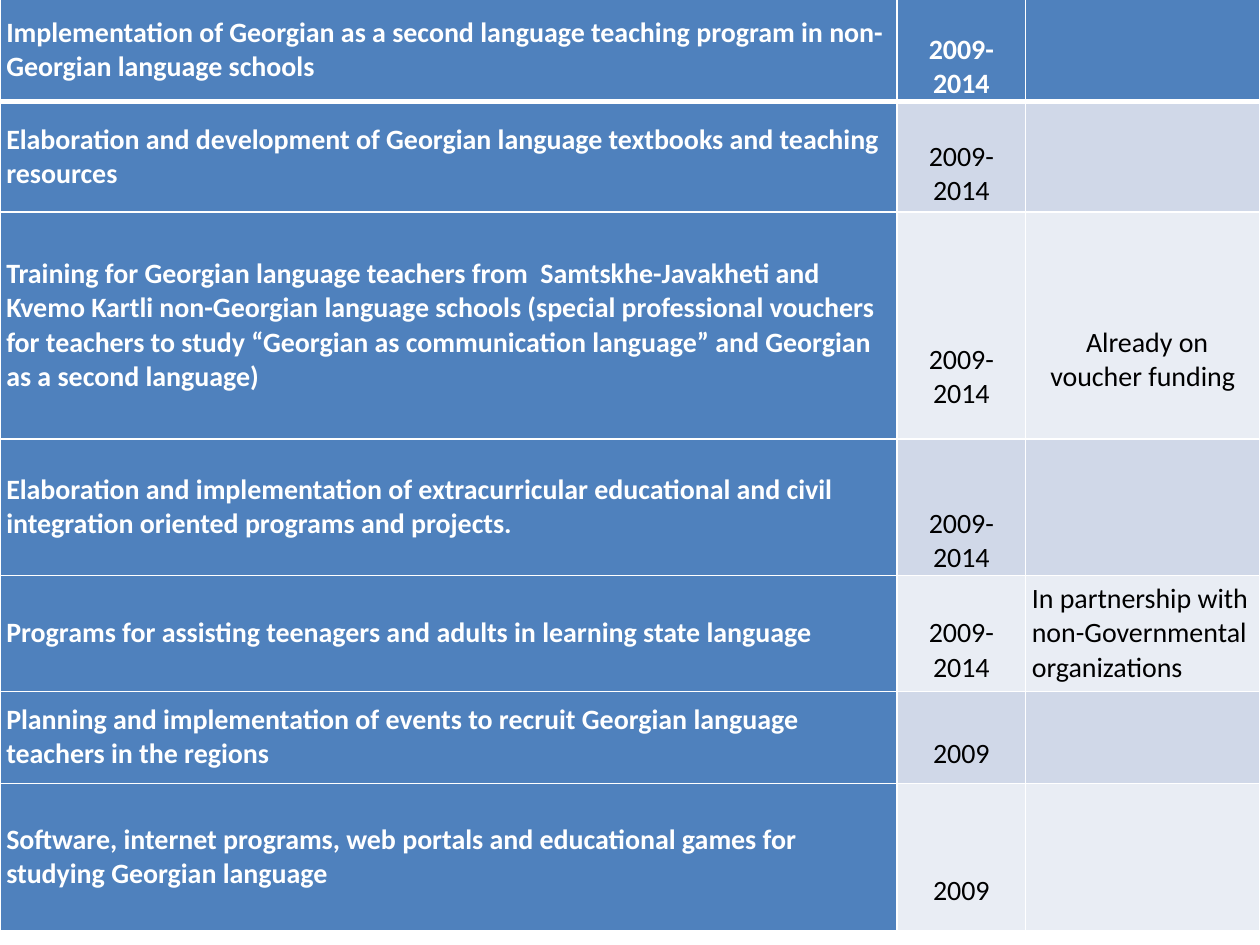
from typing import NamedTuple

from lxml import etree
from pptx import Presentation
from pptx.dml.color import RGBColor
from pptx.enum.text import MSO_ANCHOR, PP_ALIGN
from pptx.oxml.ns import qn
from pptx.util import Inches, Length, Pt

MIDDLE = MSO_ANCHOR.MIDDLE
LEFT, CENTER = PP_ALIGN.LEFT, PP_ALIGN.CENTER

COLORS = {
    "accent": "4F81BD",
    "band_dark": "D0D8E8",
    "band_light": "E9EDF4",
    "white": "FFFFFF",
    "black": "000000",
}
COLUMN_WIDTHS = (7.12, 1.02, 1.86)
LINE_HEIGHT = 0.27
SIDE_MARGIN = Inches(0.05)


class Entry(NamedTuple):
    text: str = ""
    lines_down: int = 0
    align: PP_ALIGN = CENTER
    indent: Length = Inches(0)


class Activity(NamedTuple):
    height: float
    title: str
    years: Entry
    note: Entry = Entry()


ACTIVITIES = (
    Activity(0.79, "Implementation of Georgian as a second language teaching program "
             "in non-Georgian language schools", Entry("2009-2014", 1)),
    Activity(0.88, "Elaboration and development of Georgian language textbooks "
             "and teaching resources", Entry("2009-2014", 1)),
    Activity(1.8, "Training for Georgian language teachers from  Samtskhe-Javakheti and "
             "Kvemo Kartli non-Georgian language schools (special professional vouchers "
             "for teachers to study “Georgian as communication language” and Georgian "
             "as a second language)", Entry("2009-2014", 3),
             Entry("Already on voucher funding", 2, indent=Inches(0.07))),
    Activity(1.05, "Elaboration and implementation of extracurricular educational and civil "
             "integration oriented programs and projects.", Entry("2009-2014", 2)),
    Activity(0.92, "Programs for assisting teenagers and adults in learning state language",
             Entry("2009-2014", 1),
             Entry("In partnership with non-Governmental organizations", align=LEFT)),
    Activity(0.73, "Planning and implementation of events to recruit Georgian language "
             "teachers in the regions", Entry("2009", 1)),
    Activity(1.17, "Software, internet programs, web portals and educational games for "
             "studying Georgian language", Entry("2009", 2)),
)


def color(name: str) -> RGBColor:
    return RGBColor.from_string(COLORS[name])


def set_borders(cell, widths: dict[str, int]) -> None:
    """Put white border lines ahead of the cell's fill, as the schema orders them."""
    properties = cell._tc.get_or_add_tcPr()
    for position, (side, width) in enumerate(widths.items()):
        line = etree.Element(qn(f"a:ln{side}"), w=str(Pt(width)))
        fill = etree.SubElement(line, qn("a:solidFill"))
        etree.SubElement(fill, qn("a:srgbClr"), val=COLORS["white"])
        properties.insert(position, line)


def fill_cell(cell, entry: Entry, background: str, strong: bool) -> None:
    """Style a cell; the top margin pushes its text down by whole lines."""
    cell.fill.solid()
    cell.fill.fore_color.rgb = color(background)
    layout = {
        "vertical_anchor": MIDDLE,
        "margin_left": SIDE_MARGIN,
        "margin_right": SIDE_MARGIN,
        "margin_top": Inches(entry.lines_down * LINE_HEIGHT),
        "margin_bottom": Inches(0),
    }
    for name, value in layout.items():
        setattr(cell, name, value)
    if not entry.text:
        return
    para = cell.text_frame.paragraphs[0]
    para.alignment = entry.align
    if entry.indent:
        para_format = para._p.get_or_add_pPr()
        para_format.set("marL", "0")
        para_format.set("indent", str(entry.indent))
    span = para.add_run()
    span.text = entry.text
    for name, value in {"name": "Calibri", "size": Pt(16), "bold": strong}.items():
        setattr(span.font, name, value)
    span.font.color.rgb = color("white" if strong else "black")


def draw_activities(page) -> None:
    height = sum(activity.height for activity in ACTIVITIES)
    table = page.shapes.add_table(
        len(ACTIVITIES), len(COLUMN_WIDTHS),
        Inches(0), Inches(-0.01), Inches(sum(COLUMN_WIDTHS)), Inches(height),
    ).table
    table.first_row = table.horz_banding = False
    for column, width in zip(table.columns, COLUMN_WIDTHS):
        column.width = Inches(width)
    for index, activity in enumerate(ACTIVITIES):
        table.rows[index].height = Inches(activity.height)
        band = "band_dark" if index % 2 else "band_light"
        borders = {"L": 1, "R": 1, "T": 3 if index == 1 else 1, "B": 3 if index == 0 else 1}
        entries = (Entry(activity.title, align=LEFT), activity.years, activity.note)
        for column_index, entry in enumerate(entries):
            strong = index == 0 or column_index == 0
            cell = table.cell(index, column_index)
            fill_cell(cell, entry, "accent" if strong else band, strong)
            set_borders(cell, borders)


def main() -> None:
    deck = Presentation()
    deck.slide_width, deck.slide_height = Inches(10), Inches(7.5)
    page = deck.slides.add_slide(deck.slide_layouts[6])
    draw_activities(page)
    deck.save("out.pptx")


if __name__ == "__main__":
    main()
